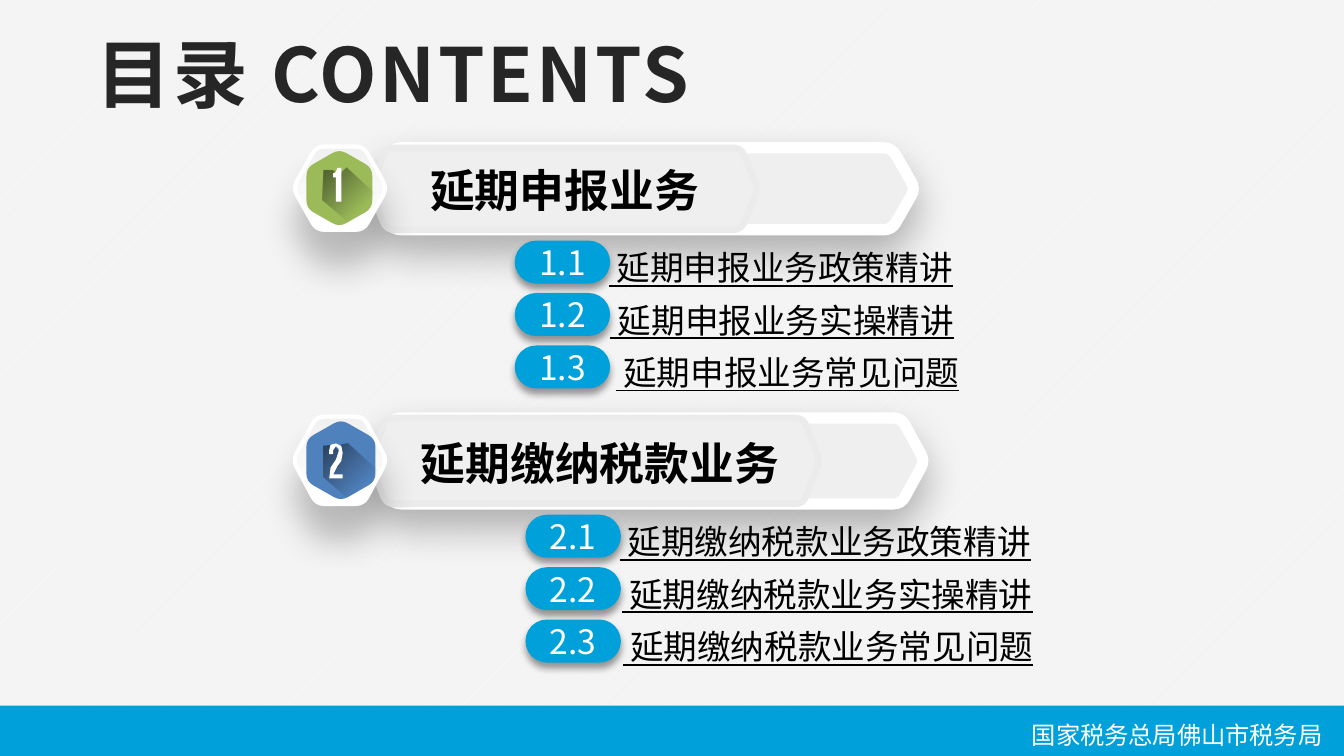
from lxml import etree
from pptx import Presentation
from pptx.dml.color import RGBColor as RGB
from pptx.enum.dml import MSO_PATTERN as PAT
from pptx.enum.shapes import MSO_SHAPE as SHAPE
from pptx.enum.text import MSO_ANCHOR as ANCHOR, PP_ALIGN as ALIGN
from pptx.oxml import parse_xml
from pptx.oxml.ns import qn
from pptx.util import Inches, Pt

FONT = "Noto Sans CJK SC"
NS = 'xmlns:a="http://schemas.openxmlformats.org/drawingml/2006/main"'
HUES = {
    "blue": "00A1DA", "white": "FFFFFF", "paper": "F2F2F2", "dark": "262626",
    "black": "000000", "plate": "EFEFEF", "rim": "EBEBEB", "pale": "F1F1F1",
    "green": "9BBB59", "navy": "4F81BD", "shade": "0D0D0D",
}
GLOSS = (90, [(0, "pale", 100), (100, "white", 100)])
FADE = (45, [(0, "shade", 55), (73, "shade", 0), (100, "shade", 0)])
ONE = {
    "digit": [(.29, .2), (.31, .19), (.32, .16), (.35, .16), (.35, .41),
              (.31, .41), (.31, .23), (.29, .23)],
    "cast": [(.4, .56), (.21, .4), (.22, .18), (.29, .18), (.33, .22),
             (.39, .16), (.62, .37)],
}
TWO = {
    "digit": [(.26, .25), (.27, .21), (.31, .2), (.35, .22), (.36, .27),
              (.35, .33), (.32, .37), (.29, .43), (.36, .43), (.36, .46),
              (.26, .46), (.27, .38), (.31, .32), (.33, .26), (.33, .24),
              (.31, .22), (.29, .25), (.29, .28), (.26, .28)],
    "cast": [(.4, .61), (.22, .45), (.22, .22), (.29, .21), (.34, .26),
             (.35, .21), (.4, .2), (.64, .42)],
}


def rgb(hue):
    """Return the named colour."""
    return RGB.from_string(HUES[hue])


def paint(shape, fill, line=None, wide=0, cast=None):
    """Set fill, outline and outer shadow of a shape."""
    props = shape._element.spPr
    if isinstance(fill, str):
        shape.fill.solid()
        shape.fill.fore_color.rgb = rgb(fill)
    else:
        angle, stops = fill
        marks = "".join(
            f'<a:gs pos="{pos * 1000}"><a:srgbClr val="{HUES[hue]}">'
            f'<a:alpha val="{alpha * 1000}"/></a:srgbClr></a:gs>'
            for pos, hue, alpha in stops)
        shape.fill.background()
        props.replace(props.find(qn("a:noFill")), parse_xml(
            f'<a:gradFill {NS} rotWithShape="1"><a:gsLst>{marks}</a:gsLst>'
            f'<a:lin ang="{angle * 60000}" scaled="0"/></a:gradFill>'))
    if line:
        shape.line.color.rgb = rgb(line)
        shape.line.width = Pt(wide)
    else:
        shape.line.fill.background()
    shape.shadow.inherit = False
    if cast:
        hue, alpha, blur, dist = cast
        props.find(qn("a:effectLst")).append(parse_xml(
            f'<a:outerShdw {NS} blurRad="{Pt(blur)}" dist="{Pt(dist)}" '
            f'dir="5400000" algn="t" rotWithShape="0">'
            f'<a:srgbClr val="{HUES[hue]}"><a:alpha val="{alpha * 1000}"/>'
            f'</a:srgbClr></a:outerShdw>'))


def write(frame, text, size=18, hue="black", bold=False, under=False,
          align=ALIGN.LEFT, pad=(.1, .05), space=0):
    """Fill a text frame with one line."""
    frame.word_wrap = True
    frame.margin_left = frame.margin_right = Inches(pad[0])
    frame.margin_top = frame.margin_bottom = Inches(pad[1])
    line = frame.paragraphs[0]
    line.alignment = align
    run = line.add_run()
    run.text = text
    font = run.font
    font.size, font.bold, font.underline = Pt(size), bold, under
    font.name, font.color.rgb = FONT, rgb(hue)
    props = run._r.get_or_add_rPr()
    props.set("spc", str(int(space * 100)))
    etree.SubElement(props, qn("a:ea")).set("typeface", FONT)


def label(slide, box, text, **form):
    """Add a text box."""
    frame = slide.shapes.add_textbox(*map(Inches, box)).text_frame
    write(frame, text, **form)


def draw(slide, points, *args, **form):
    """Add a closed outline through points."""
    spots = [(Inches(x), Inches(y)) for x, y in points]
    path = slide.shapes.build_freeform(*spots[0])
    path.add_line_segments(spots[1:], close=True)
    paint(path.convert_to_shape(), *args, **form)


def bend(points, cut=.06):
    """Round the corners of a polygon."""
    out = []
    for i, (x, y) in enumerate(points):
        ends = []
        for px, py in (points[i - 1], points[(i + 1) % len(points)]):
            part = cut / ((px - x) ** 2 + (py - y) ** 2) ** .5
            ends.append((x + (px - x) * part, y + (py - y) * part))
        (ax, ay), (bx, by) = ends
        for t in (0, .25, .5, .75, 1):
            a, m, b = (1 - t) ** 2, 2 * t * (1 - t), t ** 2
            out.append((a * ax + m * x + b * bx, a * ay + m * y + b * by))
    return out


def hexa(x, y, w, h, slant):
    """Return a rounded hexagon with tips left and right."""
    tip, mid = .01, y + h / 2
    return bend([(x + slant, y), (x + w - slant, y), (x + w + tip, mid),
                 (x + w - slant, y + h), (x + slant, y + h), (x - tip, mid)])


def banner(slide, x, y, h, wide, inner, hue, sign):
    """Draw a section banner with its numbered badge."""
    k = h / .61
    left = x + .57
    draw(slide, hexa(left, y, wide, h, .165), "plate", "white", 6,
         ("black", 28, 21, 10))
    draw(slide, hexa(left, y, inner, h, .115), "plate", "rim", 3.5)
    draw(slide, hexa(x, y - .01, .68, h + .01, .165), GLOSS, "white", 2.25,
         ("dark", 28, 18, 18))
    core = hexa(y + .02 * k, x + .09, .56 * k, .49 * k, .13 * k)
    draw(slide, [(b, a) for a, b in core], hue)
    for part, fill in (("cast", FADE), ("digit", "white")):
        draw(slide, [(x + a, y - .01 + b) for a, b in sign[part]], fill)


def topics(slide, x, y, num, rows):
    """List the numbered topics of a section."""
    for i, (name, left, wide) in enumerate(rows):
        top = y + i * .39
        pill = slide.shapes.add_shape(
            SHAPE.ROUNDED_RECTANGLE, *map(Inches, (x, top, .71, .32)))
        pill.adjustments[0] = .5
        paint(pill, "blue", cast=("black", 40, 4, 3))
        pill.text_frame.vertical_anchor = ANCHOR.MIDDLE
        write(pill.text_frame, f"{num}.{i + 1}", hue="white",
              align=ALIGN.CENTER)
        label(slide, (x + left, top, wide, .4), " " + name,
              under=True, align=ALIGN.CENTER)


def footer(slide, x, y, w, h):
    """Draw the bottom band with the office name."""
    band = slide.shapes.add_shape(SHAPE.RECTANGLE, *map(Inches, (x, y, w, h)))
    paint(band, "blue")
    label(slide, (x + 7.61, y + .06, 2.5, .32), "国家税务总局佛山市税务局",
          size=13, hue="white")


def main():
    """Build the contents slide."""
    deck = Presentation()
    deck.slide_width, deck.slide_height = Inches(10), Inches(5.625)
    slide = deck.slides.add_slide(deck.slide_layouts[6])
    back = slide.background.fill
    back.patterned()
    back.pattern = PAT.LIGHT_UPWARD_DIAGONAL
    back.fore_color.rgb, back.back_color.rgb = rgb("white"), rgb("paper")
    footer(slide, -.03, 5.25, 10.07, .39)
    label(slide, (.62, .16, 5.23, .77), "目录 CONTENTS", size=40,
          hue="dark", bold=True, space=1.5)
    banner(slide, 2.19, 1.1, .61, 4.04, 2.87, "green", ONE)
    banner(slide, 2.19, 3.11, .64, 4.11, 3.33, "navy", TWO)
    for name, box in (("延期申报业务", (3.12, 1.17, 2.89, .48)),
                      ("延期缴纳税款业务", (3.05, 3.2, 3.72, .48))):
        label(slide, box, name, size=24, bold=True, pad=(.08, .04))
    topics(slide, 3.83, 1.79, 1, [("延期申报业务政策精讲", .49, 2.98),
                                  ("延期申报业务实操精讲", .39, 3.2),
                                  ("延期申报业务常见问题", .39, 3.28)])
    topics(slide, 3.91, 3.83, 2, [("延期缴纳税款业务政策精讲", .49, 3.48),
                                  ("延期缴纳税款业务实操精讲", .46, 3.57),
                                  ("延期缴纳税款业务常见问题", .39, 3.72)])
    deck.save("out.pptx")


if __name__ == "__main__":
    main()
